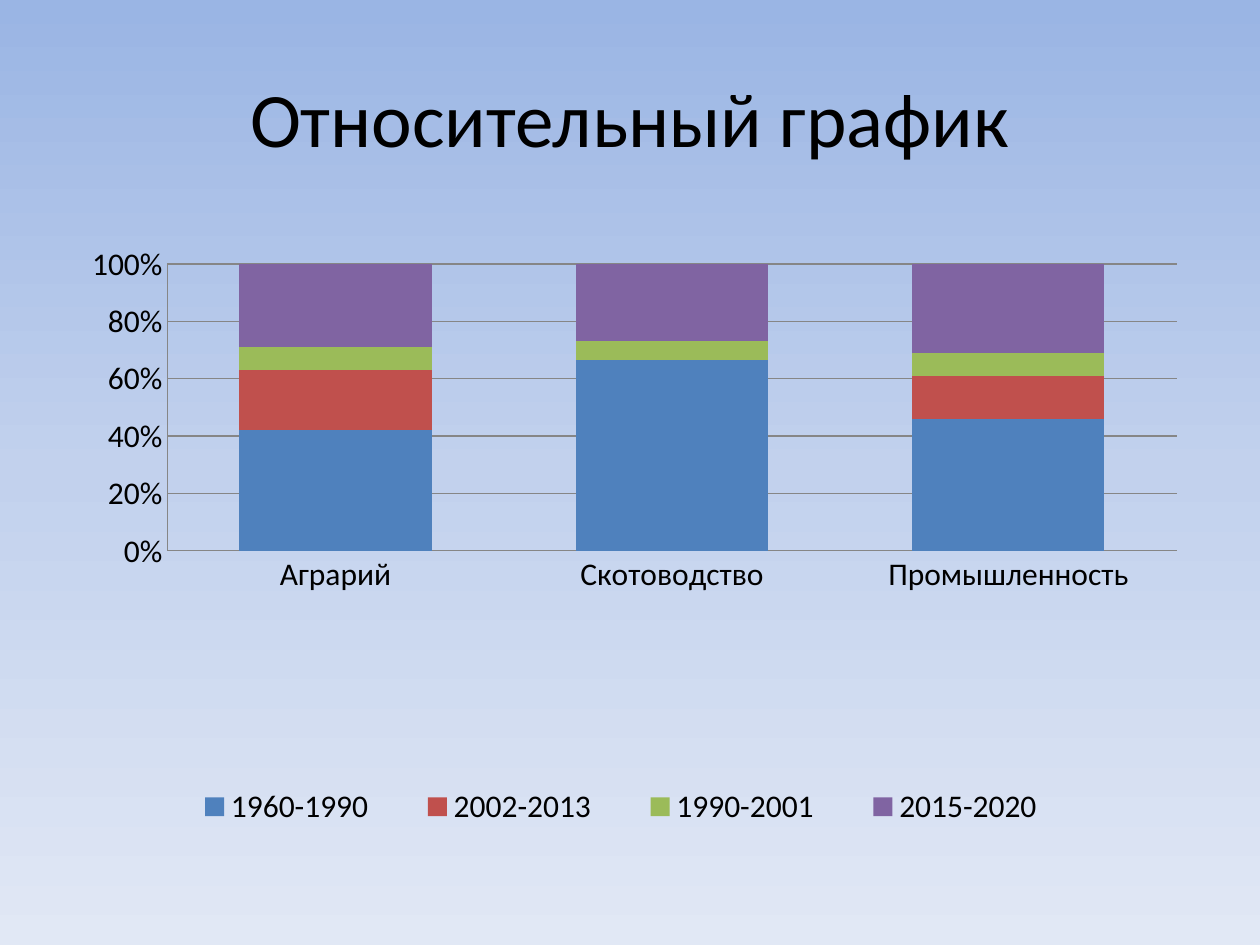
from lxml import etree
from pptx import Presentation
from pptx import util as u
from pptx.chart.data import CategoryChartData
from pptx.dml.color import RGBColor
from pptx.enum import chart as ch, text
from pptx.oxml.ns import qn

PX_PER_INCH = 126
FONT = "Calibri"
BLACK = RGBColor(0x00, 0x00, 0x00)
GRID_GRAY = RGBColor(0x86, 0x86, 0x86)
SKY_STOPS = [
    (0, RGBColor(0x9A, 0xB5, 0xE4)),
    (50, RGBColor(0xC2, 0xD1, 0xED)),
    (100, RGBColor(0xE1, 0xE8, 0xF5)),
]

SECTORS = ["Аграрий", "Скотоводство", "Промышленность"]
PERIODS = [
    ("1960-1990", [42, 67, 46], RGBColor(0x4F, 0x81, 0xBD)),
    ("2002-2013", [21, 0, 15], RGBColor(0xC0, 0x50, 0x4D)),
    ("1990-2001", [8, 7, 8], RGBColor(0x9B, 0xBB, 0x59)),
    ("2015-2020", [29, 27, 31], RGBColor(0x80, 0x64, 0xA2)),
]


def px(length):
    return u.Emu(round(length * 914400 / PX_PER_INCH))


def box(left, top, width, height):
    return [px(length) for length in (left, top, width, height)]


def paint_background(slide):
    fill = slide.background.fill
    fill.gradient()
    fill.gradient_angle = 270
    # A third stop is needed, so the stop list is rebuilt
    stop_list = next(slide.element.iter(qn("a:gsLst")))
    for stop in list(stop_list):
        stop_list.remove(stop)
    for position, color in SKY_STOPS:
        stop = etree.SubElement(stop_list, qn("a:gs"), pos=str(position * 1000))
        etree.SubElement(stop, qn("a:srgbClr"), val=str(color))


def add_title(slide, wording):
    title = slide.shapes.title
    title.left, title.top, title.width, title.height = box(63, 38, 1134, 157)
    frame = title.text_frame
    frame.vertical_anchor = text.MSO_ANCHOR.MIDDLE
    paragraph = frame.paragraphs[0]
    paragraph.alignment = text.PP_ALIGN.CENTER
    run = paragraph.add_run()
    run.text = wording
    run.font.name = FONT
    run.font.size = u.Pt(44)
    run.font.color.rgb = BLACK


def set_layout(part, x, y, w, h, inner=False):
    """Place a chart part by fractions of the chart area."""
    layout = part.find(qn("c:layout"))
    if layout is None:
        layout = etree.Element(qn("c:layout"))
        if inner:
            part.insert(0, layout)
        else:
            part.find(qn("c:legendPos")).addnext(layout)
    manual = etree.SubElement(layout, qn("c:manualLayout"))
    settings = [("layoutTarget", "inner")] if inner else []
    settings += [("xMode", "edge"), ("yMode", "edge"),
                 ("x", x), ("y", y), ("w", w), ("h", h)]
    for tag, value in settings:
        etree.SubElement(manual, qn(f"c:{tag}"), val=str(value))


def style_line(line):
    line.color.rgb = GRID_GRAY
    line.width = u.Pt(0.75)


def style_axes(chart):
    for axis in (chart.category_axis, chart.value_axis):
        axis.major_tick_mark = ch.XL_TICK_MARK.NONE
        axis.minor_tick_mark = ch.XL_TICK_MARK.NONE
        style_line(axis.format.line)
    values = chart.value_axis
    values.has_major_gridlines = True
    style_line(values.major_gridlines.format.line)
    values.tick_labels.number_format = "0%"
    values.tick_labels.number_format_is_linked = False


def add_share_chart(slide):
    data = CategoryChartData()
    data.categories = SECTORS
    for period, shares, _ in PERIODS:
        data.add_series(period, shares)
    chart = slide.shapes.add_chart(
        ch.XL_CHART_TYPE.COLUMN_STACKED_100, *box(54, 214, 1134, 624), data
    ).chart
    chart.has_title = False
    chart.font.name = FONT
    chart.font.size = u.Pt(18)
    chart.font.color.rgb = BLACK

    # Columns
    columns = chart.plots[0]
    columns.gap_width = 75
    columns.overlap = 100
    columns.vary_by_categories = False
    for series, (_, _, color) in zip(columns.series, PERIODS):
        series.format.fill.solid()
        series.format.fill.fore_color.rgb = color

    style_axes(chart)

    # Legend
    chart.has_legend = True
    chart.legend.position = ch.XL_LEGEND_POSITION.BOTTOM
    chart.legend.include_in_layout = False

    # Plot and legend places
    plot_area = next(chart.element.iter(qn("c:plotArea")))
    set_layout(plot_area, 0.1, 0.08, 0.89, 0.46, inner=True)
    set_layout(next(chart.element.iter(qn("c:legend"))), 0.09, 0.9, 0.82, 0.1)


def main():
    deck = Presentation()
    deck.slide_width, deck.slide_height = px(1260), px(945)
    slide = deck.slides.add_slide(deck.slide_layouts[5])
    paint_background(slide)
    add_title(slide, "Относительный график")
    add_share_chart(slide)
    deck.save("out.pptx")


if __name__ == "__main__":
    main()
